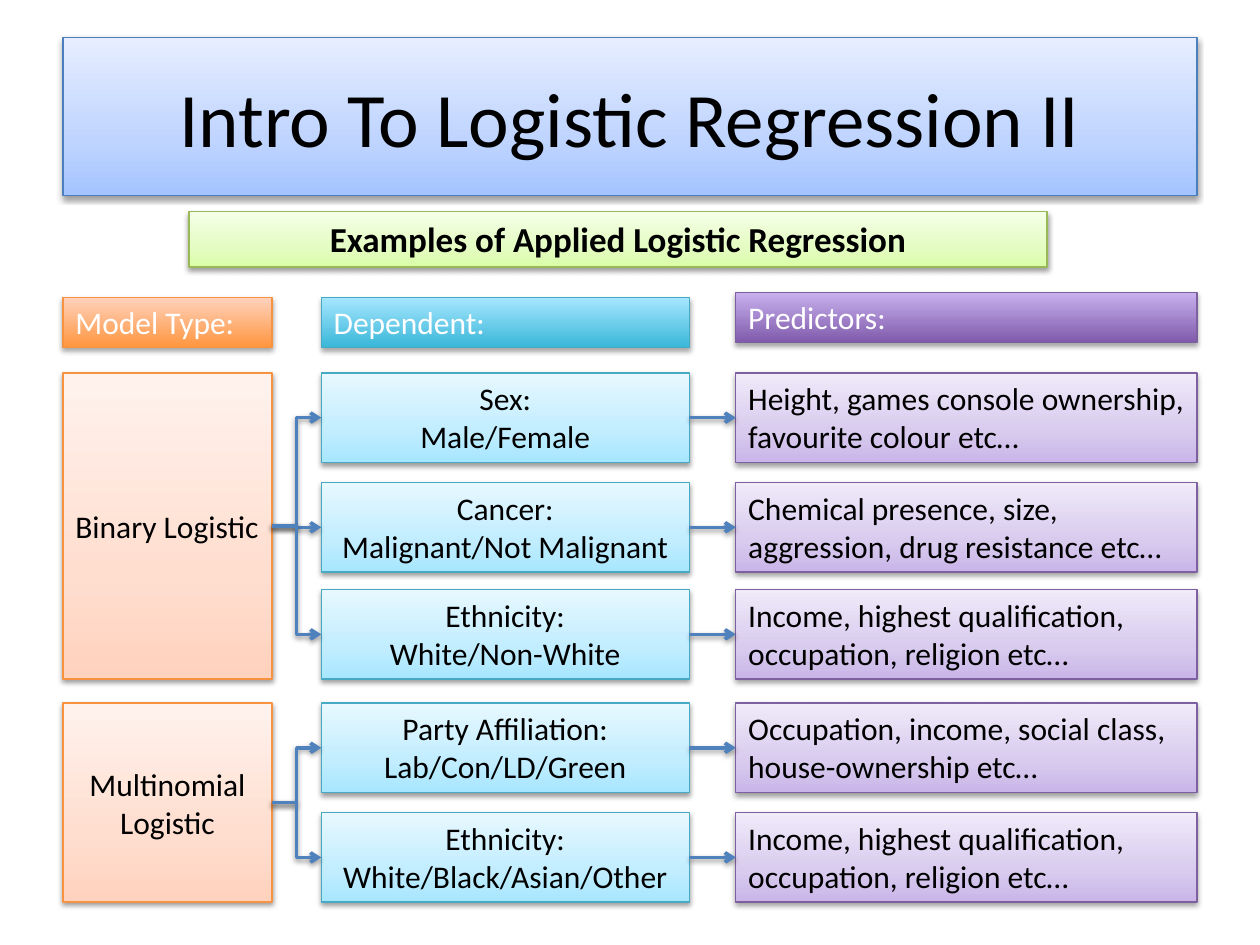
from lxml.etree import SubElement
from pptx import Presentation
from pptx.dml.color import RGBColor
from pptx.enum.shapes import MSO_CONNECTOR as Link, MSO_SHAPE as Shape
from pptx.enum.text import MSO_ANCHOR as Anchor, MSO_AUTO_SIZE as Fit, PP_ALIGN as Align
from pptx.oxml.ns import qn
from pptx.util import Inches, Pt

BLACK = RGBColor(0, 0, 0)
WHITE = RGBColor(255, 255, 255)
ARROW = RGBColor(0x4F, 0x81, 0xBD)
BLUE_LINE = RGBColor(0x4B, 0x7E, 0xBC)
GREEN_LINE = RGBColor(0x98, 0xB9, 0x55)
ORANGE_LINE = RGBColor(0xF6, 0x92, 0x40)
AQUA_LINE = RGBColor(0x46, 0xAA, 0xC5)
PURPLE_LINE = RGBColor(0x7D, 0x60, 0xA0)

BLUE = (BLUE_LINE, ("A4C4FF", "BFD4FF", "E6EEFF"))
GREEN = (GREEN_LINE, ("DAFDA7", "E4FCC2", "F5FFE7"))
ORANGE = (ORANGE_LINE, ("FFD2BD", "FFDED0", "FFF2ED"))
AQUA = (AQUA_LINE, ("A7E6FF", "C1EDFF", "E7F8FF"))
PURPLE = (PURPLE_LINE, ("C9B5E8", "D8CBEE", "F0EAF9"))
STRONG_ORANGE = (ORANGE_LINE, ("FF953E", "FFD2BD"))
STRONG_AQUA = (AQUA_LINE, ("39B7D8", "A7E6FF"))
STRONG_PURPLE = (PURPLE_LINE, ("7F5BAB", "C8B0ED"))

MODEL = (0.5, 1.66)
DEPENDENT = (2.55, 2.92)
PREDICTORS = (5.84, 3.66)
ROW_HEIGHT = 0.71
HEADER_HEIGHT = 0.4

HEADERS = [
    ("Model Type:", MODEL, 2.36, STRONG_ORANGE),
    ("Dependent:", DEPENDENT, 2.36, STRONG_AQUA),
    ("Predictors:", PREDICTORS, 2.32, STRONG_PURPLE),
]
MODELS = [
    ("Binary Logistic", Align.LEFT, [
        (2.96, "Sex:\nMale/Female",
         "Height, games console ownership, favourite colour etc…"),
        (3.83, "Cancer:\nMalignant/Not Malignant",
         "Chemical presence, size, aggression, drug resistance etc…"),
        (4.68, "Ethnicity:\nWhite/Non-White",
         "Income, highest qualification, occupation, religion etc…"),
    ]),
    ("Multinomial Logistic", Align.CENTER, [
        (5.58, "Party Affiliation:\nLab/Con/LD/Green",
         "Occupation, income, social class, house-ownership etc…"),
        (6.45, "Ethnicity:\nWhite/Black/Asian/Other",
         "Income, highest qualification, occupation, religion etc…"),
    ]),
]


def add_shadow(shape, opacity=38, distance=1.6):
    effects = SubElement(shape._element.spPr, qn("a:effectLst"))
    shadow = SubElement(effects, qn("a:outerShdw"), blurRad=str(Pt(3.1)),
                        dist=str(Pt(distance)), dir="5400000", rotWithShape="0")
    color = SubElement(shadow, qn("a:srgbClr"), val="000000")
    SubElement(color, qn("a:alpha"), val=str(opacity * 1000))


def paint(shape, style):
    line_color, colors = style
    shape.fill.gradient()
    shape.fill.gradient_angle = 90
    stops = shape._element.spPr.find(qn("a:gradFill")).find(qn("a:gsLst"))
    stops.clear()
    positions = (0, 35, 100) if len(colors) == 3 else (0, 100)
    for position, color in zip(positions, colors):
        stop = SubElement(stops, qn("a:gs"), pos=str(position * 1000))
        SubElement(stop, qn("a:srgbClr"), val=color)
    shape.line.color.rgb = line_color
    shape.line.width = Pt(0.75)
    if len(colors) == 3:
        add_shadow(shape)
    else:
        add_shadow(shape, 35, 1.8)


def write(shape, text, size, color, align, anchor, bold=False):
    frame = shape.text_frame
    frame.text = text
    frame.word_wrap = True
    frame.vertical_anchor = anchor
    for para in frame.paragraphs:
        para.alignment = align
        para.font.name = "Calibri"
        para.font.size = Pt(size)
        para.font.color.rgb = color
        para.font.bold = bold


def add_box(page, text, column, top, height, style, align=Align.LEFT,
            color=BLACK, size=18, bold=False, anchor=Anchor.TOP):
    left, width = column
    box = page.shapes.add_shape(Shape.RECTANGLE, Inches(left), Inches(top),
                                Inches(width), Inches(height))
    paint(box, style)
    write(box, text, size, color, align, anchor, bold)
    if anchor == Anchor.TOP:
        box.text_frame.auto_size = Fit.SHAPE_TO_FIT_TEXT


def add_arrow(page, kind, start, end):
    arrow = page.shapes.add_connector(kind, *map(Inches, start + end))
    arrow.line.color.rgb = ARROW
    arrow.line.width = Pt(2)
    SubElement(arrow.line._get_or_add_ln(), qn("a:tailEnd"), type="arrow")
    add_shadow(arrow)


def add_model(page, name, align, rows):
    top = rows[0][0]
    height = rows[-1][0] + ROW_HEIGHT - top
    add_box(page, name, MODEL, top, height, ORANGE, align, anchor=Anchor.MIDDLE)
    for row_top, dependent, predictors in rows:
        add_box(page, dependent, DEPENDENT, row_top, ROW_HEIGHT, AQUA, Align.CENTER)
        add_box(page, predictors, PREDICTORS, row_top, ROW_HEIGHT, PURPLE)
    for row_top, _, _ in rows:
        middle = row_top + ROW_HEIGHT / 2
        add_arrow(page, Link.STRAIGHT, (sum(DEPENDENT), middle), (PREDICTORS[0], middle))
        add_arrow(page, Link.ELBOW, (sum(MODEL), top + height / 2), (DEPENDENT[0], middle))


def main():
    deck = Presentation()
    deck.slide_width, deck.slide_height = Inches(10), Inches(7.5)
    page = deck.slides.add_slide(deck.slide_layouts[5])
    title = page.shapes.title
    title.left, title.top = Inches(0.5), Inches(0.3)
    title.width, title.height = Inches(9), Inches(1.25)
    paint(title, BLUE)
    write(title, "Intro To Logistic Regression II", 44, BLACK, Align.CENTER, Anchor.MIDDLE)
    add_box(page, "Examples of Applied Logistic Regression", (1.5, 6.81), 1.68, 0.44,
            GREEN, Align.CENTER, size=20, bold=True)
    for text, column, top, style in HEADERS:
        add_box(page, text, column, top, HEADER_HEIGHT, style, color=WHITE)
    for name, align, rows in MODELS:
        add_model(page, name, align, rows)
    deck.save("out.pptx")


if __name__ == "__main__":
    main()
